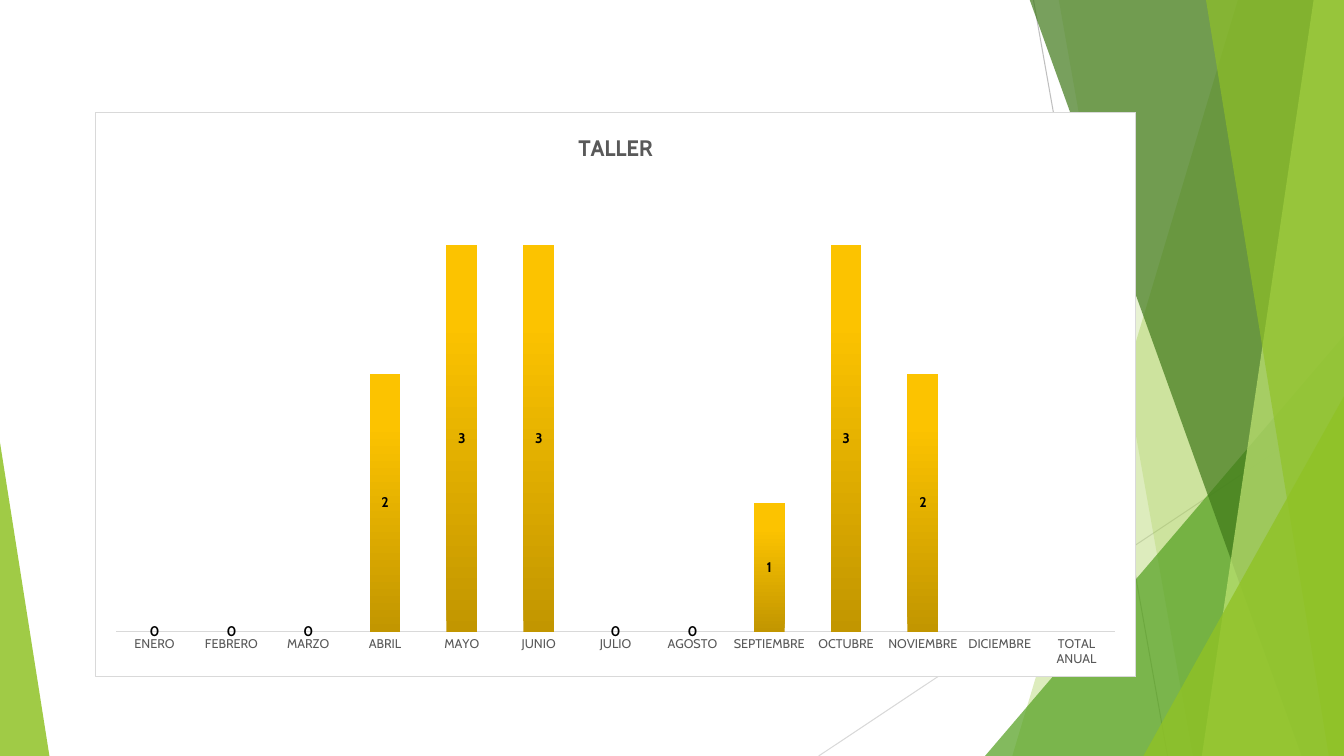
from lxml.etree import SubElement
from copy import deepcopy
from pptx import Presentation
from pptx.chart.data import CategoryChartData
from pptx.dml.color import RGBColor
from pptx.enum.chart import XL_CHART_TYPE, XL_LABEL_POSITION, XL_TICK_LABEL_POSITION, XL_TICK_MARK
from pptx.enum.shapes import MSO_CONNECTOR, MSO_SHAPE
from pptx.oxml import parse_xml
from pptx.oxml.ns import nsdecls, qn
from pptx.util import Inches, Pt

FACE = "Cabin"
WIDE, HIGH = 13.33, 7.5
TOP = -0.01
MONTHS = ["ENERO", "FEBRERO", "MARZO", "ABRIL", "MAYO", "JUNIO", "JULIO", "AGOSTO",
          "SEPTIEMBRE", "OCTUBRE", "NOVIEMBRE", "DICIEMBRE", "TOTAL ANUAL"]
COUNTS = [0, 0, 0, 2, 3, 3, 0, 0, 1, 3, 2, None, None]
STOPS = [(0, "C29600"), (0.8, "FCC300"), (1, "FDC400")]

RAYS = [((10.25, 0), (11.58, HIGH), "BFBFBF"),
        ((WIDE, 4.03), (8.12, HIGH), "D9D9D9")]
# top-left x, bottom-left x, colour, opacity in percent
BANDS = [(12.28, 10.04, "90C226", 30), (10.5, 11.83, "90C226", 20)]
FRONT = [(10.21, 12.91, "3F7819", 70), (13.03, 11.92, "C0E474", 70),
         (11.96, 13.18, "90C226", 65)]


def color(text):
    return RGBColor.from_string(text)


def style(item, values):
    for name, value in values.items():
        setattr(item, name, value)


def set_font(font, size, tint, bold=False):
    style(font, {"name": FACE, "size": Pt(size), "bold": bold})
    font.color.rgb = color(tint)


def paint(shape, tint, alpha):
    """Give a flat, see-through fill with no outline."""
    shape.shadow.inherit = False
    shape.fill.solid()
    shape.fill.fore_color.rgb = color(tint)
    shape.line.fill.background()
    node = shape._element.spPr.find(qn("a:solidFill"))[0]
    SubElement(node, qn("a:alpha"), val=str(alpha * 1000))


def add_ray(slide, start, end, tint):
    ends = [Inches(v) for v in (*start, *end)]
    ray = slide.shapes.add_connector(MSO_CONNECTOR.STRAIGHT, *ends)
    ray.line.color.rgb = color(tint)
    ray.line.width = Pt(0.75)
    SubElement(ray._element.spPr, qn("a:effectLst"))


def add_band(slide, top, foot, tint, alpha):
    """Draw a panel from a slanted left edge to the right of the slide."""
    form = slide.shapes.build_freeform(Inches(top), Inches(TOP))
    rest = [(WIDE, TOP), (WIDE, HIGH), (foot, HIGH)]
    form.add_line_segments([(Inches(x), Inches(y)) for x, y in rest], close=True)
    paint(form.convert_to_shape(), tint, alpha)


def add_wedge(slide, left, top, width, apex, tint, alpha):
    """Draw a triangle that stands on the foot of the slide."""
    box = [Inches(v) for v in (left, top, width, HIGH - top)]
    wedge = slide.shapes.add_shape(MSO_SHAPE.ISOSCELES_TRIANGLE, *box)
    wedge.adjustments[0] = apex
    paint(wedge, tint, alpha)


def set_frame(chart):
    """Fill and outline the chart, and fix the place of its plot."""
    chart._chartSpace.find(qn("c:chart")).addnext(parse_xml(
        f'<c:spPr {nsdecls("c", "a")}><a:solidFill><a:srgbClr val="FFFFFF"/></a:solidFill>'
        '<a:ln w="9525"><a:solidFill><a:srgbClr val="D9D9D9"/></a:solidFill></a:ln></c:spPr>'))
    area = chart._chartSpace.chart.plotArea
    for old in area.findall(qn("c:layout")):
        area.remove(old)
    layout = SubElement(area, qn("c:layout"))
    area.insert(0, layout)
    manual = SubElement(layout, qn("c:manualLayout"))
    rules = {"layoutTarget": "inner", "xMode": "edge", "yMode": "edge",
             "x": 0.02, "y": 0.12, "w": 0.96, "h": 0.8}
    for name, value in rules.items():
        SubElement(manual, qn(f"c:{name}"), val=str(value))


def shade(series):
    fill = series.format.fill
    fill.gradient()
    fill.gradient_angle = 90
    stops = series._element.xpath(".//a:gsLst")[0]
    stops.append(deepcopy(stops[-1]))
    for stop, (place, tint) in zip(fill.gradient_stops, STOPS):
        stop.position = place
        stop.color.rgb = color(tint)


def add_bars(slide):
    data = CategoryChartData()
    data.categories = MONTHS
    data.add_series("Series 1", COUNTS)
    box = [Inches(v) for v in (0.94, 1.11, 10.33, 5.61)]
    chart = slide.shapes.add_chart(XL_CHART_TYPE.COLUMN_STACKED, *box, data).chart
    set_font(chart.font, 10, "000000")
    chart.has_legend = False
    chart.chart_title.include_in_layout = False
    frame = chart.chart_title.text_frame
    frame.text = "TALLER"
    set_font(frame.paragraphs[0].runs[0].font, 16, "595959", True)
    set_frame(chart)

    plot = chart.plots[0]
    style(plot, {"gap_width": 150, "overlap": 100, "vary_by_categories": False})
    shade(plot.series[0])
    labels = plot.series[0].data_labels
    style(labels, {"show_value": True, "position": XL_LABEL_POSITION.CENTER})
    set_font(labels.font, 10, "000000", True)

    months = chart.category_axis
    style(months, {"major_tick_mark": XL_TICK_MARK.NONE,
                   "minor_tick_mark": XL_TICK_MARK.NONE,
                   "tick_label_position": XL_TICK_LABEL_POSITION.NEXT_TO_AXIS})
    set_font(months.tick_labels.font, 9, "595959")
    months.format.line.color.rgb = color("D9D9D9")
    months.format.line.width = Pt(0.75)
    style(chart.value_axis, {"visible": False, "has_major_gridlines": False,
                             "minimum_scale": 0, "maximum_scale": 3.5})


def main():
    deck = Presentation()
    style(deck, {"slide_width": Inches(WIDE), "slide_height": Inches(HIGH)})
    slide = deck.slides.add_slide(deck.slide_layouts[6])
    for ray in RAYS:
        add_ray(slide, *ray)
    for band in BANDS:
        add_band(slide, *band)
    add_wedge(slide, 9.77, 3.33, 3.56, 1, "54A021", 72)
    for band in FRONT:
        add_band(slide, *band)
    add_wedge(slide, 11.34, 3.93, 1.99, 1, "90C226", 80)
    add_wedge(slide, 0, 4.39, 0.49, 0, "90C226", 85)
    add_bars(slide)
    deck.save("out.pptx")


if __name__ == "__main__":
    main()
